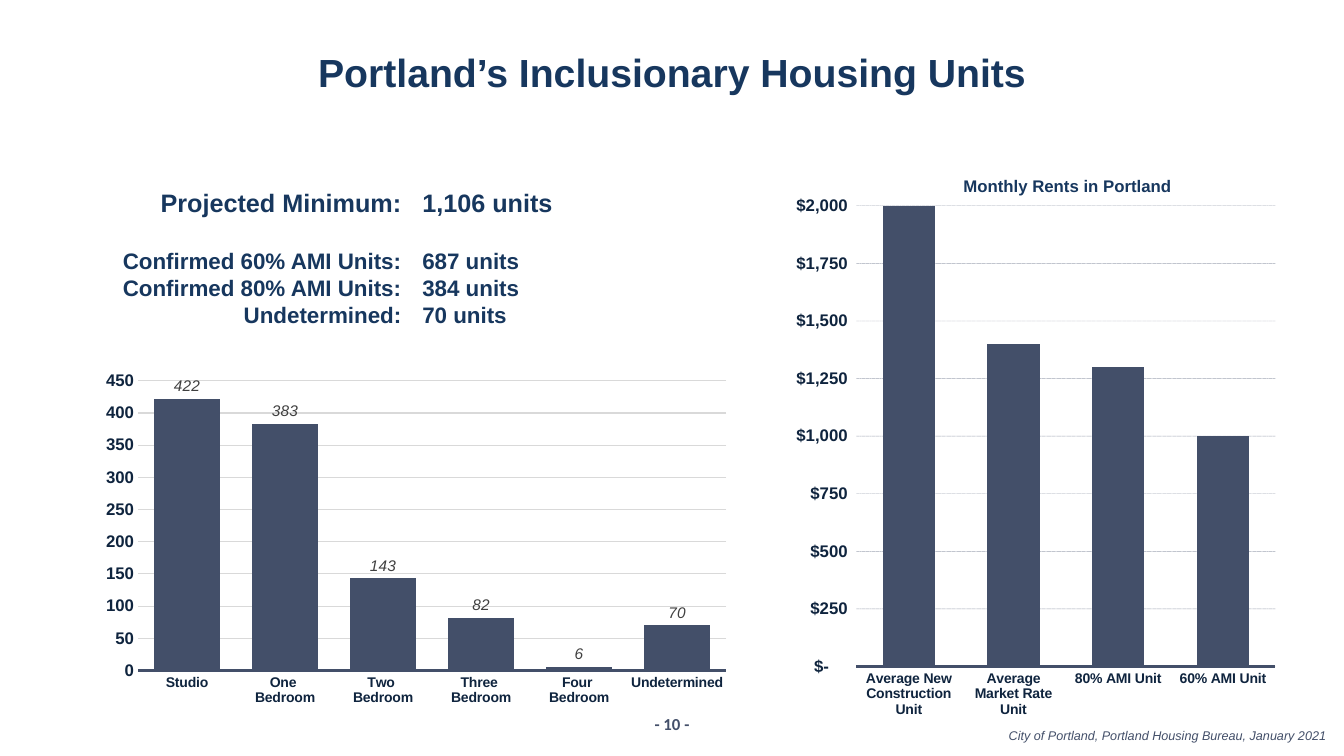
from lxml import etree
from pptx import Presentation
from pptx.chart.data import CategoryChartData
from pptx.dml.color import RGBColor
from pptx.enum.chart import XL_CHART_TYPE, XL_LABEL_POSITION, XL_TICK_MARK
from pptx.enum.dml import MSO_LINE
from pptx.enum.text import MSO_ANCHOR, PP_ALIGN
from pptx.oxml.ns import qn
from pptx.util import Emu, Pt

COLUMNS = XL_CHART_TYPE.COLUMN_CLUSTERED
OUTSIDE_END = XL_LABEL_POSITION.OUTSIDE_END
NO_TICKS = XL_TICK_MARK.NONE
SHORT_DASH = MSO_LINE.SQUARE_DOT
LEFT, CENTER, RIGHT = PP_ALIGN.LEFT, PP_ALIGN.CENTER, PP_ALIGN.RIGHT
MIDDLE = MSO_ANCHOR.MIDDLE

EMU_PER_PX = 9144  # 100 px to the inch
COLORS = {
    "navy": "17375E",
    "slate": "434F69",
    "axis": "0F243E",
    "grid": "D9D9D9",
    "label": "404040",
}
DOLLARS = r'_("$"* #,##0_);_("$"* \(#,##0\);_("$"* "-"??_);_(@_)'


def px(length):
    return Emu(length * EMU_PER_PX)


def color(name):
    return RGBColor.from_string(COLORS[name])


class SlideBuilder:
    """Holds the style and the current slide."""

    font_name = "Arial"

    def __init__(self, presentation):
        self.slide = presentation.slides.add_slide(presentation.slide_layouts[5])

    def style_font(self, font, size, color_name, bold=True, italic=False, name=None):
        font.name = name or self.font_name
        font.size = Pt(size)
        font.bold = bold
        font.italic = italic
        font.color.rgb = color(color_name)

    def fill_frame(self, frame, lines, align, inset, color_name="navy", **font_style):
        """Each line is (text, size, space before in points)."""
        frame.word_wrap = True
        frame.margin_left = frame.margin_right = px(10 if inset else 0)
        frame.margin_top = frame.margin_bottom = px(5 if inset else 0)
        frame.text = "\n".join(text for text, _, _ in lines)
        for paragraph, (_, size, space) in zip(frame.paragraphs, lines):
            paragraph.alignment = align
            paragraph.space_before = Pt(space)
            for run in paragraph.runs:
                self.style_font(run.font, size, color_name, **font_style)

    def title(self, box, text, size):
        shape = self.slide.shapes.title
        shape.left, shape.top, shape.width, shape.height = map(px, box)
        self.fill_frame(shape.text_frame, [(text, size, 0)], CENTER, False)
        shape.text_frame.vertical_anchor = MIDDLE

    def text(self, box, lines, align, inset=True, **style):
        shape = self.slide.shapes.add_textbox(*map(px, box))
        self.fill_frame(shape.text_frame, lines, align, inset, **style)

    def place(self, parent, x, y, width=None, height=None):
        """Pins a plot area or chart title at fractions of the chart."""
        layout = parent.find(qn("c:layout"))
        if layout is None:
            layout = etree.Element(qn("c:layout"))
            text = parent.find(qn("c:tx"))
            parent.insert(0 if text is None else 1, layout)
        manual = etree.SubElement(layout, qn("c:manualLayout"))
        settings = [("xMode", "edge"), ("yMode", "edge"), ("x", x), ("y", y)]
        if width:
            settings.insert(0, ("layoutTarget", "inner"))
            settings += [("w", width), ("h", height)]
        for tag, value in settings:
            etree.SubElement(manual, qn("c:" + tag)).set("val", str(value))

    def column_chart(self, box, values, plot, gap, overlap=0):
        data = CategoryChartData()
        data.categories = list(values)
        data.add_series("Series 1", list(values.values()))
        chart = self.slide.shapes.add_chart(COLUMNS, *map(px, box), data).chart
        chart.has_legend = chart.has_title = False
        self.style_font(chart.font, 12, "axis")
        self.place(chart.plots[0]._element.getparent(), *plot)

        columns = chart.plots[0]
        columns.gap_width, columns.overlap = gap, overlap
        columns.vary_by_categories = False
        fill = columns.series[0].format.fill
        fill.solid()
        fill.fore_color.rgb = color("slate")

        for axis, size in ((chart.category_axis, 10), (chart.value_axis, 12)):
            axis.major_tick_mark = axis.minor_tick_mark = NO_TICKS
            self.style_font(axis.tick_labels.font, size, "axis")
        chart.category_axis.format.line.color.rgb = color("slate")
        chart.category_axis.format.line.width = Pt(2)
        chart.value_axis.format.line.fill.background()
        return chart

    def gridlines(self, chart, color_name, width):
        chart.value_axis.has_major_gridlines = True
        line = chart.value_axis.major_gridlines.format.line
        line.color.rgb = color(color_name)
        line.width = Pt(width)
        return line

    def unit_chart(self, box, values):
        chart = self.column_chart(box, values, (0.07, 0.043, 0.91, 0.831), 50)
        self.gridlines(chart, "grid", 0.75)
        chart.value_axis.minimum_scale = 0
        chart.value_axis.maximum_scale = 450
        chart.value_axis.major_unit = 50
        columns = chart.plots[0]
        columns.has_data_labels = True
        labels = columns.data_labels
        labels.show_value = True
        labels.position = OUTSIDE_END
        self.style_font(labels.font, 11, "label", bold=False, italic=True)

    def rent_chart(self, box, values, title):
        chart = self.column_chart(box, values, (0.149, 0.094, 0.831, 0.8), 100, -25)
        line = self.gridlines(chart, "slate", 0.25)
        line.dash_style = SHORT_DASH
        grid = chart.value_axis.major_gridlines._xAx.find(qn("c:majorGridlines"))
        shade = next(grid.iter(qn("a:srgbClr")))
        etree.SubElement(shade, qn("a:alpha")).set("val", "50000")

        axis = chart.value_axis
        axis.minimum_scale, axis.maximum_scale, axis.major_unit = 0, 2100, 250
        axis.tick_labels.number_format = DOLLARS
        axis.tick_labels.number_format_is_linked = False

        chart.has_title = True
        frame = chart.chart_title.text_frame
        frame.text = title
        self.style_font(frame.paragraphs[0].runs[0].font, 12, "navy")
        self.place(chart.chart_title._element, 0.355, 0.078)


def main():
    presentation = Presentation()
    presentation.slide_width, presentation.slide_height = px(1333), px(750)
    builder = SlideBuilder(presentation)

    builder.title((75, 48, 1183, 47), "Portland’s Inclusionary Housing Units", 28)

    # Unit totals: label, value, size, space before
    totals = [
        ("Projected Minimum:", "1,106 units", 18, 0),
        ("Confirmed 60% AMI Units:", "687 units", 16, 21),
        ("Confirmed 80% AMI Units:", "384 units", 16, 0),
        ("Undetermined:", "70 units", 16, 0),
    ]
    for column, (left, width, align) in enumerate([(75, 333, RIGHT), (409, 150, LEFT)]):
        lines = [(row[column], row[2], row[3]) for row in totals]
        builder.text((left, 181, width, 182), lines, align)

    # Monthly rents
    rents = {
        "Average New Construction Unit": 2000,
        "Average Market Rate Unit": 1400,
        "80% AMI Unit": 1300,
        "60% AMI Unit": 1000,
    }
    builder.rent_chart((775, 125, 500, 600), rents, "Monthly Rents in Portland")

    # Units by size
    units = {
        "Studio": 422,
        "One \nBedroom": 383,
        "Two \nBedroom": 143,
        "Three \nBedroom": 82,
        "Four \nBedroom": 6,
        "Undetermined": 70,
    }
    builder.unit_chart((92, 363, 641, 346), units)

    # Source and page number
    source = "City of Portland, Portland Housing Bureau, January 2021"
    builder.text((983, 717, 342, 25), [(source, 9, 0)], RIGHT,
                 color_name="slate", bold=False, italic=True)
    builder.text((622, 708, 89, 20), [("- 10 -", 12, 0)], CENTER, inset=False,
                 color_name="slate", name="Calibri")

    presentation.save("out.pptx")


if __name__ == "__main__":
    main()
